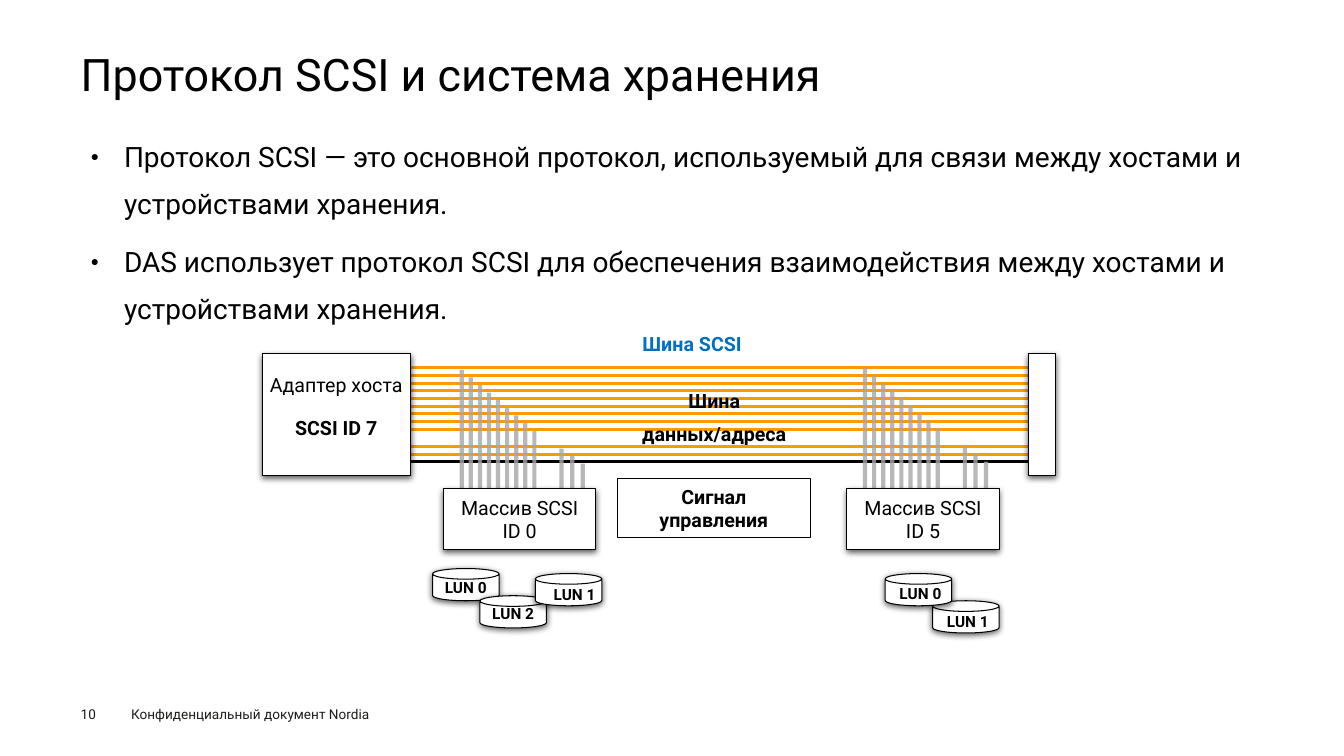
import pptx
import pptx.dml.color
import pptx.enum.shapes
import pptx.enum.text
import pptx.oxml
import pptx.oxml.ns
import pptx.util

COLORS = {"ink": "000000", "paper": "FFFFFF", "data": "FF9900",
          "tap": "A7A7A7", "heading": "0070C0", "footer": "1D1D1B"}
SHAPES = pptx.enum.shapes.MSO_SHAPE
ALIGN = pptx.enum.text.PP_ALIGN
ANCHOR = pptx.enum.text.MSO_ANCHOR
NO_INSETS = {f"margin_{side}": 0 for side in ("left", "top", "right", "bottom")}
LABEL = {"alignment": ALIGN.CENTER, "line_spacing": 1.4}
CENTERED = {"alignment": ALIGN.CENTER}
LEFT = {"alignment": ALIGN.LEFT}


def apply(target, values):
    for name, value in values.items():
        setattr(target, name, value)


def element(tag, **attributes):
    made = pptx.oxml.parse_xml(f'<a:{tag} {pptx.oxml.ns.nsdecls("a")}/>')
    for name, value in attributes.items():
        made.set(name, str(value))
    return made


class BusSlide:
    """Slide on a grid of 133.33 columns by 75 rows, all cells square."""

    def __init__(self, deck):
        self.cell = deck.slide_height / 75
        self.slide = deck.slides.add_slide(deck.slide_layouts[1])
        self.font = {"name": "Roboto", "bold": False}

    def grid(self, *lengths):
        return [round(length * self.cell) for length in lengths]

    def rgb(self, color):
        return pptx.dml.color.RGBColor.from_string(COLORS[color])

    def typeset(self, frame, text, size, layout, color="ink", gap=0, bold_lines=(), bullet=False):
        frame.word_wrap = True
        for index, line in enumerate(text.split("\n")):
            paragraph = frame.paragraphs[0] if index == 0 else frame.add_paragraph()
            if bullet:
                properties = paragraph._p.get_or_add_pPr()
                indent, = self.grid(3.3)
                properties.set("marL", str(indent))
                properties.set("indent", str(-indent))
                properties.append(element("buSzPct", val=50000))
                properties.append(element("buChar", char="●"))
            apply(paragraph, layout)
            paragraph.space_before = pptx.util.Pt(gap if index else 0)
            run = paragraph.add_run()
            run.text = line
            apply(run.font, {**self.font, "size": pptx.util.Pt(size), "bold": index in bold_lines})
            run.font.color.rgb = self.rgb(color)

    def placeholder(self, index, place, text, size, layout, frame_format, **style):
        holder = self.slide.placeholders[index]
        apply(holder, dict(zip(("left", "top", "width", "height"), self.grid(*place))))
        apply(holder.text_frame, frame_format)
        holder.text_frame.auto_size = pptx.enum.text.MSO_AUTO_SIZE.NONE
        self.typeset(holder.text_frame, text, size, layout, **style)

    def label(self, place, text, size, layout, **style):
        frame = self.slide.shapes.add_textbox(*self.grid(*place)).text_frame
        apply(frame, NO_INSETS)
        self.typeset(frame, text, size, layout, **style)

    def block(self, place, kind=SHAPES.RECTANGLE, text="", shadow=True, **style):
        shape = self.slide.shapes.add_shape(kind, *self.grid(*place))
        shape.shadow.inherit = False
        shape.fill.solid()
        shape.fill.fore_color.rgb = self.rgb("paper")
        shape.line.color.rgb = self.rgb("ink")
        shape.line.width = pptx.util.Pt(0.75)
        if shadow:
            effect = element("outerShdw", blurRad=57150, dist=19050, dir=5400000, rotWithShape=0)
            tint = element("srgbClr", val=COLORS["ink"])
            tint.append(element("alpha", val=63000))
            effect.append(tint)
            shape._element.spPr.find(pptx.oxml.ns.qn("a:effectLst")).append(effect)
        if text:
            shape.text_frame.vertical_anchor = ANCHOR.MIDDLE
            self.typeset(shape.text_frame, text, 14, CENTERED, **style)
        return shape

    def wire(self, start, end, color, width, opacity=100):
        wire = self.slide.shapes.add_connector(
            pptx.enum.shapes.MSO_CONNECTOR.STRAIGHT, *self.grid(*start, *end))
        wire.line.color.rgb = self.rgb(color)
        wire.line.width = pptx.util.Pt(width)
        if opacity < 100:
            tint = next(wire._element.spPr.iter(pptx.oxml.ns.qn("a:srgbClr")))
            tint.append(element("alpha", val=opacity * 1000))
        wire._element.spPr.append(element("effectLst"))

    def lun(self, can, caption, name):
        cylinder = self.block((*can, 6.6, 3.2), SHAPES.CAN)
        cylinder.adjustments[0] = 0.33
        self.label((*caption, 7, 2.8), name, 11, LABEL, bold_lines=(0,))


deck = pptx.Presentation()
deck.slide_width = pptx.util.Inches(13.33)
deck.slide_height = pptx.util.Inches(7.5)
page = BusSlide(deck)

# Title and bullets
page.placeholder(0, (8, 4.9, 117.3, 5.4), "Протокол SCSI и система хранения", 32,
                 {**LEFT, "line_spacing": 0.9}, {**NO_INSETS, "vertical_anchor": ANCHOR.MIDDLE})
page.placeholder(1, (8, 12, 117.3, 53.3),
                 "Протокол SCSI — это основной протокол, используемый для связи между хостами "
                 "и устройствами хранения.\n"
                 "DAS использует протокол SCSI для обеспечения взаимодействия между хостами "
                 "и устройствами хранения.", 20, {**LEFT, "line_spacing": 1.4},
                 {"vertical_anchor": ANCHOR.TOP}, gap=7.9, bullet=True)

# Footer
page.label((8, 70, 4.5, 1.6), "10", 9.7, LEFT, color="footer")
page.label((13, 70, 27, 1.6), "Конфиденциальный документ Nordia", 9.7, LEFT, color="footer")

# Bus lines: nine for data and addresses, then three for control
data_rows = [(36.5 + 0.76 * i, "data") for i in range(9)]
control_rows = [(44.3 + 0.75 * i, color) for i, color in enumerate(("data", "data", "ink"))]
for row, color in data_rows + control_rows:
    page.wire((38, row), (103.8, row), color, 2.25)

# Bus captions, host adapter and terminator
page.label((58.8, 32.9, 19.7, 2.4), "Шина SCSI", 14, CENTERED, color="heading", bold_lines=(0,))
page.block((61.2, 47.5, 19.2, 5.8), text="Сигнал управления", shadow=False, bold_lines=(0,))
page.block((102, 35.1, 2.7, 12.1))
page.block((26, 35.1, 14.7, 12.1))
page.label((25.6, 36.1, 15.5, 7.8), "Адаптер хоста\nSCSI ID 7", 14, LABEL, gap=7, bold_lines=(1,))

# Arrays, each tapping every bus line
data_taps = [(45.8 + 0.9 * i, 36.7 + 0.75 * i) for i in range(9)]
control_taps = [(55.7 + 1.05 * i, 44.5 + 0.75 * i) for i in range(3)]
for shift, lift, array_id in ((0, 0, 0), (40, 0.2, 5)):
    for column, row in data_taps + control_taps:
        page.wire((column + shift, 54), (column + shift, row - lift), "tap", 3, opacity=80)
    page.block((44 + shift, 48.5, 15.1, 6), text=f"Массив SCSI\nID {array_id}")

# LUNs below the arrays
for can, caption, name in (
        ((42.9, 56.4), (42.7, 56.6), "LUN 0"),
        ((47.6, 59.1), (47.4, 59.2), "LUN 2"),
        ((53.1, 56.9), (53.5, 57.3), "LUN 1"),
        ((92.5, 59.6), (92.5, 60), "LUN 1"),
        ((87.8, 56.9), (87.8, 57.2), "LUN 0")):
    page.lun(can, caption, name)

# Data bus caption, above the lines
page.label((61.5, 37.7, 18.7, 6.6), "Шина данных/адреса", 14, LABEL, bold_lines=(0,))

deck.save("out.pptx")
